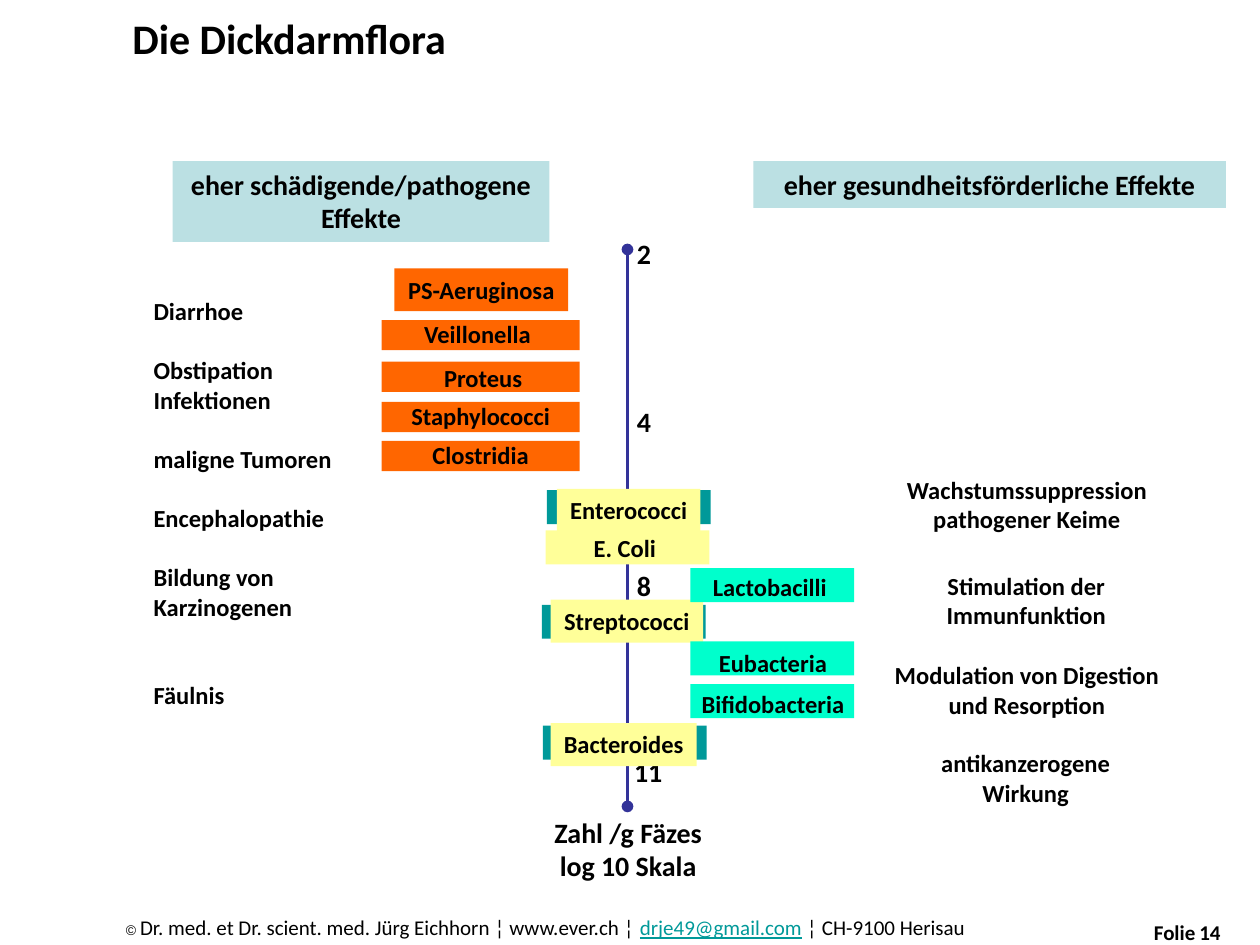
from dataclasses import dataclass
from typing import Optional

from lxml.etree import SubElement
from pptx import Presentation
from pptx.dml.color import RGBColor
from pptx.enum.shapes import MSO_CONNECTOR as Connector, MSO_SHAPE as Shape
from pptx.enum.text import MSO_ANCHOR as Anchor, PP_ALIGN as Align
from pptx.oxml.ns import qn
from pptx.util import Pt

PX = 9144  # EMU per px, at 100 px to the inch
BLACK = RGBColor(0x00, 0x00, 0x00)
PALE_BLUE = RGBColor(0xBB, 0xE0, 0xE3)
ORANGE = RGBColor(0xFF, 0x66, 0x00)
MINT = RGBColor(0x00, 0xFF, 0xCC)
YELLOW = RGBColor(0xFF, 0xFF, 0x99)
TEAL = RGBColor(0x00, 0x99, 0x99)
AXIS_BLUE = RGBColor(0x33, 0x33, 0x99)
LINE_GAP = 17  # points, one line of 14 pt text


@dataclass(frozen=True)
class Box:
    left: int
    top: int
    width: int
    height: int

    def emu(self) -> tuple:
        return tuple(n * PX for n in (self.left, self.top, self.width, self.height))


@dataclass(frozen=True)
class Label:
    text: str
    box: Box
    size: int = 14
    fill: Optional[RGBColor] = None


@dataclass(frozen=True)
class Germ:
    bar: Box
    color: RGBColor
    label: Label


@dataclass(frozen=True)
class Piece:
    text: str
    size: int = 12
    font: str = "Calibri"
    color: RGBColor = BLACK
    bold: bool = False
    underline: bool = False


def format_span(span, size: int, bold: bool = True, name: str = "Calibri",
                color: RGBColor = BLACK) -> None:
    span.font.name = name
    span.font.size = Pt(size)
    span.font.bold = bold
    span.font.color.rgb = color


def add_bar(page, box: Box, color: RGBColor):
    bar = page.shapes.add_shape(Shape.RECTANGLE, *box.emu())
    bar.shadow.inherit = False
    bar.fill.solid()
    bar.fill.fore_color.rgb = color
    bar.line.fill.background()
    return bar


def add_label(page, label: Label, align=Align.CENTER):
    if label.fill is None:
        holder = page.shapes.add_textbox(*label.box.emu())
    else:
        holder = add_bar(page, label.box, label.fill)
    frame = holder.text_frame
    frame.word_wrap = False
    frame.vertical_anchor = Anchor.TOP
    frame.text = label.text
    for para in frame.paragraphs:
        para.alignment = align
        for span in para.runs:
            format_span(span, label.size)
    return frame


def add_germ(page, germ: Germ) -> None:
    add_bar(page, germ.bar, germ.color)
    add_label(page, germ.label)


def add_axis(page, x: int, top: int, bottom: int) -> None:
    axis = page.shapes.add_connector(
        Connector.STRAIGHT, x * PX, top * PX, x * PX, bottom * PX)
    axis.line.color.rgb = AXIS_BLUE
    axis.line.width = Pt(2.25)
    line = axis.line._get_or_add_ln()
    for end in ("a:headEnd", "a:tailEnd"):
        SubElement(line, qn(end), type="oval")
    SubElement(axis._element.spPr, qn("a:effectLst"))


def add_footer(page, box: Box, pieces: list[Piece]) -> None:
    frame = page.shapes.add_textbox(*box.emu()).text_frame
    frame.word_wrap = True
    for piece in pieces:
        span = frame.paragraphs[0].add_run()
        span.text = piece.text
        format_span(span, piece.size, piece.bold, piece.font, piece.color)
        span.font.underline = piece.underline


HEADINGS = [
    Label("eher schädigende/pathogene\nEffekte", Box(137, 128, 299, 64), 16, PALE_BLUE),
    Label("eher gesundheitsförderliche Effekte", Box(598, 128, 375, 37), 16, PALE_BLUE),
]

SCALE = [
    Label("2", Box(495, 183, 32, 37), 16),
    Label("4", Box(495, 316, 32, 37), 16),
    Label("8", Box(495, 446, 32, 37), 16),
    Label("11", Box(493, 594, 43, 37), 16),
    Label("Zahl /g Fäzes\nlog 10 Skala", Box(429, 642, 139, 64), 16),
]

GERMS = [
    # Harmful
    Germ(Box(303, 254, 157, 24), ORANGE, Label("Veillonella", Box(326, 248, 106, 34))),
    Germ(Box(303, 287, 157, 24), ORANGE, Label("Proteus", Box(342, 283, 83, 34))),
    Germ(Box(303, 319, 157, 24), ORANGE, Label("Staphylococci", Box(316, 313, 131, 34))),
    Germ(Box(303, 350, 157, 24), ORANGE, Label("Clostridia", Box(333, 344, 97, 34))),
    # On both sides of the axis
    Germ(Box(434, 389, 130, 27), TEAL,
         Label("Enterococci", Box(442, 388, 114, 34), fill=YELLOW)),
    Germ(Box(433, 421, 130, 27), YELLOW, Label("E. Coli", Box(461, 418, 70, 34))),
    Germ(Box(430, 480, 130, 27), TEAL,
         Label("Streptococci", Box(437, 476, 121, 34), fill=YELLOW)),
    Germ(Box(431, 576, 130, 27), TEAL,
         Label("Bacteroides", Box(437, 574, 116, 34), fill=YELLOW)),
    # Beneficial
    Germ(Box(548, 451, 130, 27), MINT, Label("Lactobacilli", Box(555, 449, 112, 34))),
    Germ(Box(548, 509, 130, 27), MINT, Label("Eubacteria", Box(560, 509, 107, 34))),
    Germ(Box(548, 543, 130, 27), MINT, Label("Bifidobacteria", Box(546, 542, 135, 34))),
]

# Each complaint with the number of free lines above it
COMPLAINTS = [
    ("Diarrhoe", 0), ("Obstipation", 1), ("Infektionen", 0),
    ("maligne Tumoren", 1), ("Encephalopathie", 1),
    ("Bildung von", 1), ("Karzinogenen", 0), ("Fäulnis", 2),
]

BENEFITS = [
    Label("Wachstumssuppression\npathogener Keime", Box(709, 372, 212, 57)),
    Label("Stimulation der\nImmunfunktion", Box(739, 448, 151, 57)),
    Label("Modulation von Digestion\nund Resorption", Box(697, 519, 236, 57)),
    Label("antikanzerogene\nWirkung", Box(732, 589, 164, 57)),
]


def main() -> None:
    deck = Presentation()
    deck.slide_width, deck.slide_height = 1000 * PX, 750 * PX
    page = deck.slides.add_slide(deck.slide_layouts[5])

    # Title
    title = page.shapes.title
    title.left, title.top, title.width, title.height = Box(95, 5, 642, 50).emu()
    title.text_frame.text = "Die Dickdarmflora"
    title.text_frame.vertical_anchor = Anchor.MIDDLE
    title.text_frame.paragraphs[0].alignment = Align.LEFT
    format_span(title.text_frame.paragraphs[0].runs[0], 24)

    # Headings, axis and scale
    for heading in HEADINGS:
        add_label(page, heading)
    add_axis(page, 498, 198, 640)
    for mark in SCALE:
        add_label(page, mark)

    # Germs
    add_label(page, Label("PS-Aeruginosa", Box(313, 213, 138, 34), fill=ORANGE))
    for germ in GERMS:
        add_germ(page, germ)

    # Effects on the left and right
    text = "\n".join(name for name, _ in COMPLAINTS)
    frame = add_label(page, Label(text, Box(112, 230, 162, 340)), Align.LEFT)
    for para, (_, gaps) in zip(frame.paragraphs, COMPLAINTS):
        if gaps:
            para.space_before = Pt(gaps * LINE_GAP)
    for benefit in BENEFITS:
        add_label(page, benefit)

    # Footer
    add_footer(page, Box(90, 721, 811, 30), [
        Piece("© ", 8, "Arial"),
        Piece("Dr. med. et Dr. scient. med. Jürg Eichhorn ¦ www.ever.ch ¦ "),
        Piece("drje49@gmail.com", color=TEAL, underline=True),
        Piece(" ¦ CH-9100 Herisau"),
    ])
    add_footer(page, Box(906, 725, 94, 30), [
        Piece("Folie", bold=True), Piece(" ", 8, "Arial", bold=True), Piece("14", bold=True),
    ])

    deck.save("out.pptx")


if __name__ == "__main__":
    main()
